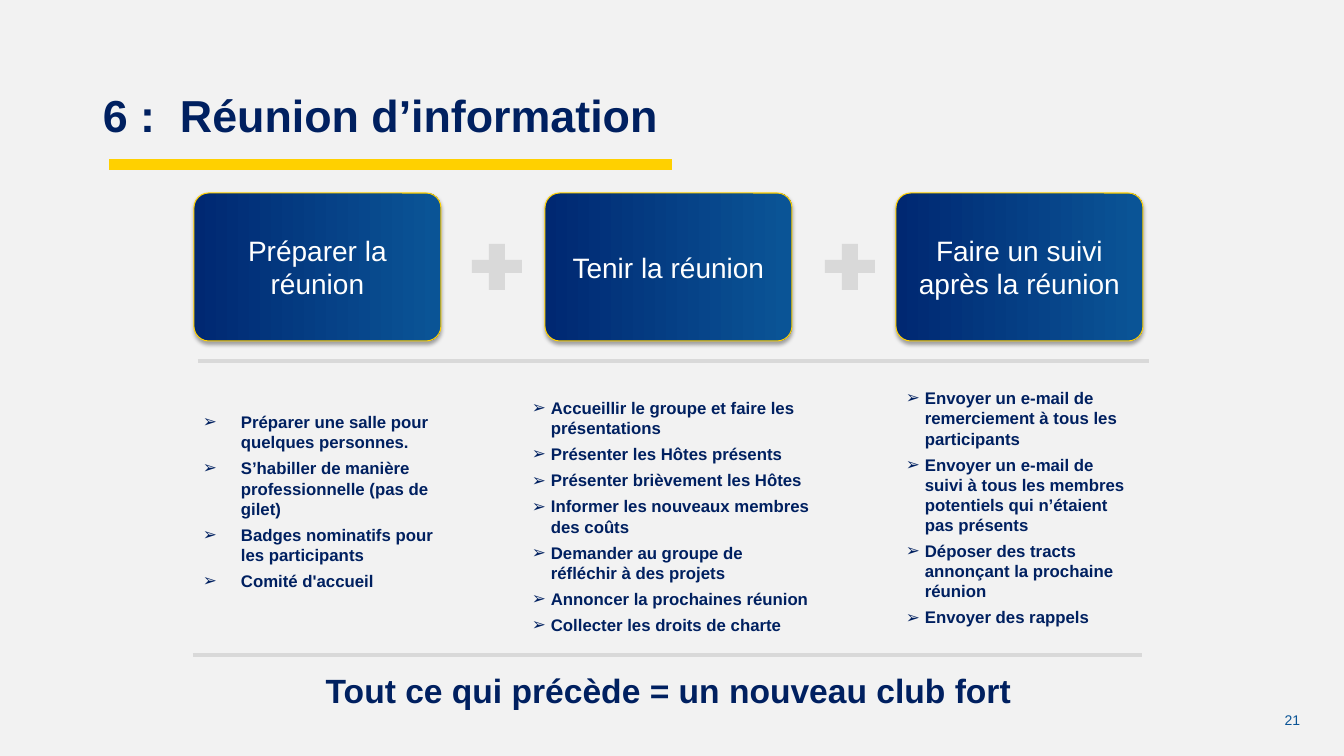
from dataclasses import dataclass

from lxml import etree
from pptx import Presentation
from pptx.dml.color import RGBColor
from pptx.enum.shapes import MSO_CONNECTOR as CONN, MSO_SHAPE as SHAPE
from pptx.enum.text import MSO_ANCHOR as ANCHOR, PP_ALIGN as ALIGN
from pptx.oxml.ns import qn
from pptx.util import Emu, Pt


@dataclass(frozen=True)
class Theme:
    font: str = "Arial"
    paper: str = "F2F2F2"
    navy: str = "002060"
    deep: str = "002872"
    blue: str = "0A5496"
    gold: str = "FFD000"
    grey: str = "D9D9D9"
    white: str = "FFFFFF"
    title: int = 32
    closing: int = 24
    card: int = 20
    bullet: int = 12
    number: int = 10


T = Theme()

STEPS = ["Préparer la réunion", "Tenir la réunion", "Faire un suivi après la réunion"]
LISTS = [
    ((193, 407, 251, 195), 38, [
        "Préparer une salle pour quelques personnes.",
        "S’habiller de manière professionnelle (pas de gilet)",
        "Badges nominatifs pour les participants",
        "Comité d'accueil",
    ]),
    ((522, 393, 302, 280), 19, [
        "Accueillir le groupe et faire les présentations",
        "Présenter les Hôtes présents",
        "Présenter brièvement les Hôtes",
        "Informer les nouveaux membres des coûts",
        "Demander au groupe de réfléchir à des projets",
        "Annoncer la prochaines réunion",
        "Collecter les droits de charte",
    ]),
    ((896, 383, 239, 255), 19, [
        "Envoyer un e-mail de remerciement à tous les participants",
        "Envoyer un e-mail de suivi à tous les membres potentiels qui n’étaient pas présents",
        "Déposer des tracts annonçant la prochaine réunion",
        "Envoyer des rappels",
    ]),
]


def px(n):
    return Emu(round(n * 914400 / 100.8))


def rgb(value):
    return RGBColor.from_string(value)


def apply(target, **values):
    for name, value in values.items():
        setattr(target, name, value)


def add_run(p, text, size, color, bold=False):
    r = p.add_run()
    r.text = text
    apply(r.font, name=T.font, size=Pt(size), bold=bold)
    r.font.color.rgb = rgb(color)


def text_box(shapes, box, **frame):
    tf = shapes.add_textbox(*map(px, box)).text_frame
    apply(tf, word_wrap=True, **frame)
    return tf


def text_line(shapes, box, text, size, color, bold=True, align=ALIGN.LEFT, spacing=1.0, **frame):
    p = text_box(shapes, box, **frame).paragraphs[0]
    apply(p, alignment=align, line_spacing=spacing)
    add_run(p, text, size, color, bold)


def bar(shapes, box, color):
    s = shapes.add_shape(SHAPE.RECTANGLE, *map(px, box))
    s.shadow.inherit = False
    s.fill.solid()
    s.fill.fore_color.rgb = rgb(color)
    s.line.fill.background()


def rule(shapes, x, y, width):
    c = shapes.add_connector(CONN.STRAIGHT, px(x), px(y), px(x + width), px(y))
    c.line.color.rgb = rgb(T.grey)
    c.line.width = Pt(3)
    etree.SubElement(c._element.spPr, qn("a:effectLst"))


def drop_shadow(s):
    s.shadow.inherit = False
    effects = s._element.spPr.find(qn("a:effectLst"))
    shadow = etree.SubElement(effects, qn("a:outerShdw"), blurRad=str(Pt(3.1)),
                              dist=str(Pt(1.8)), dir="5400000", rotWithShape="0")
    color = etree.SubElement(shadow, qn("a:srgbClr"), val="000000")
    etree.SubElement(color, qn("a:alpha"), val="35000")


def card(shapes, box, text):
    s = shapes.add_shape(SHAPE.ROUNDED_RECTANGLE, *map(px, box))
    s.adjustments[0] = 0.1
    s.fill.gradient()
    s.fill.gradient_angle = 0
    for stop, color, position in zip(s.fill.gradient_stops, (T.deep, T.blue), (0, 0.98)):
        stop.color.rgb = rgb(color)
        stop.position = position
    s.line.color.rgb = rgb(T.gold)
    s.line.width = Pt(0.75)
    drop_shadow(s)
    tf = s.text_frame
    apply(tf, word_wrap=True, vertical_anchor=ANCHOR.MIDDLE,
          **{f"margin_{side}": px(12) for side in ("left", "top", "right", "bottom")})
    p = tf.paragraphs[0]
    p.alignment = ALIGN.CENTER
    add_run(p, text, T.card, T.white)


def plus(shapes, box):
    x, y, w, h = box
    group = shapes.add_group_shape()
    bar(group.shapes, (x + 17, y, w - 34, h), T.grey)
    bar(group.shapes, (x, y + 16, w, 13), T.grey)


def steps_row(shapes, box):
    x, y, w, h = box
    for i, step in enumerate(STEPS):
        card(shapes, (x + 351 * i, y, w, h), step)
    for i in range(len(STEPS) - 1):
        plus(shapes, (x + 278 + 353 * i, y + 51, 50, 46))


def bullet_list(shapes, box, indent, items):
    tf = text_box(shapes, box)
    for i, item in enumerate(items):
        p = tf.add_paragraph() if i else tf.paragraphs[0]
        pPr = p._p.get_or_add_pPr()
        pPr.set("marL", str(px(indent)))
        pPr.set("indent", str(-px(indent)))
        etree.SubElement(pPr, qn("a:buFont"), typeface=T.font)
        etree.SubElement(pPr, qn("a:buChar"), char="➢")
        p.space_after = Pt(4.2)
        add_run(p, item, T.bullet, T.navy, True)


def heading(shapes, box):
    x, y, w, h = box
    text_line(shapes, box, "6 :  Réunion d’information", T.title, T.navy, spacing=0.9)
    bar(shapes, (x + 16, y + 70, 563, 11), T.gold)


def footer(shapes, box):
    x, y, w, h = box
    rule(shapes, x, y, 949)
    text_line(shapes, (x, y + 10, w, 50), "Tout ce qui précède = un nouveau club fort",
              T.closing, T.navy, align=ALIGN.CENTER)
    text_line(shapes, (x + 1056, y + 51, 61, 27), "21", T.number, T.blue, bold=False,
              align=ALIGN.RIGHT, vertical_anchor=ANCHOR.MIDDLE)


def main():
    prs = Presentation()
    apply(prs, slide_width=px(1344), slide_height=px(756))
    slide = prs.slides.add_slide(prs.slide_layouts[6])
    slide.background.fill.solid()
    slide.background.fill.fore_color.rgb = rgb(T.paper)
    shapes = slide.shapes
    heading(shapes, (93, 89, 1251, 104))
    steps_row(shapes, (194, 193, 247, 148))
    rule(shapes, 198, 361, 951)
    for box, indent, items in LISTS:
        bullet_list(shapes, box, indent, items)
    footer(shapes, (193, 655, 951, 101))
    prs.save("out.pptx")


if __name__ == "__main__":
    main()
